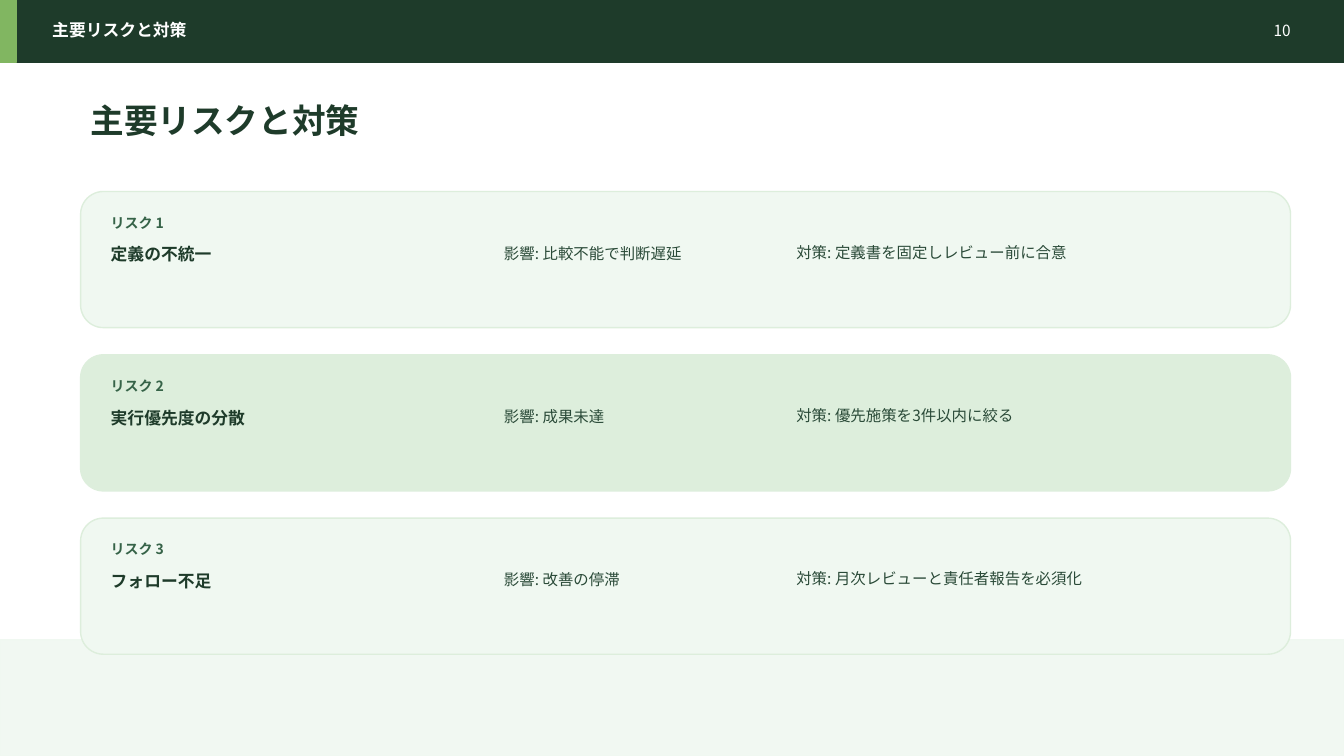
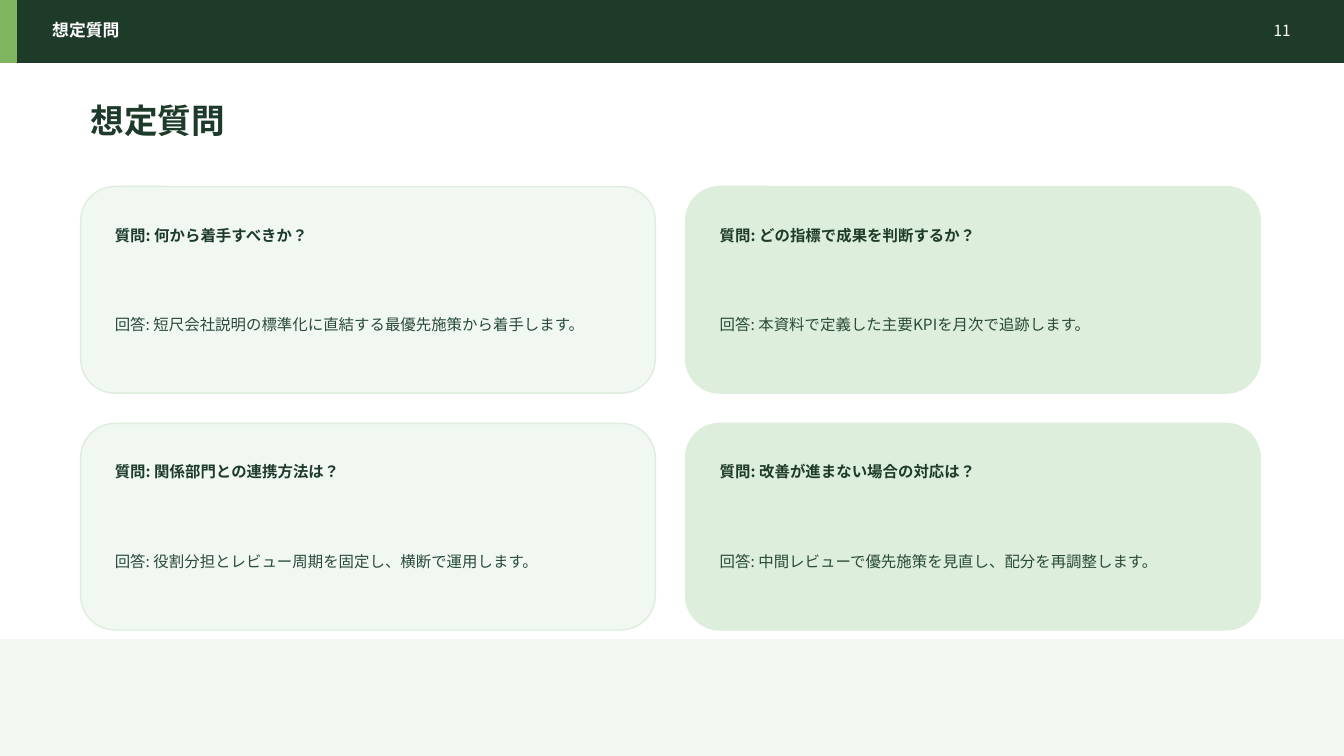
from lxml import etree
from pptx import Presentation
from pptx import util as u
from pptx.dml.color import RGBColor
from pptx.enum import lang, shapes, text
from pptx.oxml import ns

PX = 9144  # EMU per px, 100 px to the inch
WIDTH, HEIGHT = 1333, 750
SANS, SERIF = "Noto Sans CJK JP", "Cambria"
COLORS = {
    "dark": "1E3B2A",
    "accent": "81B661",
    "pale": "F0F8F1",
    "mint": "DDEEDC",
    "label": "366348",
    "body": "2A4A38",
    "white": "FFFFFF",
}
RECT = shapes.MSO_SHAPE.RECTANGLE
ROUND = shapes.MSO_SHAPE.ROUNDED_RECTANGLE
TOP, MIDDLE = text.MSO_ANCHOR.TOP, text.MSO_ANCHOR.MIDDLE
LEFT, RIGHT = text.PP_ALIGN.LEFT, text.PP_ALIGN.RIGHT


def add_box(s, kind, x, y, w, h, fill, line):
    sp = s.shapes.add_shape(kind, x * PX, y * PX, w * PX, h * PX)
    sp.shadow.inherit = False
    sp.fill.solid()
    sp.fill.fore_color.rgb = RGBColor.from_string(COLORS[fill])
    sp.line.color.rgb = RGBColor.from_string(COLORS[line])
    sp.line.width = u.Pt(1)
    return sp


def add_label(s, x, y, w, h, words, size, color, bold=False,
              font=SANS, anchor=MIDDLE, align=LEFT):
    tf = s.shapes.add_textbox(x * PX, y * PX, w * PX, h * PX).text_frame
    tf.word_wrap = True
    tf.vertical_anchor = anchor
    p = tf.paragraphs[0]
    p.alignment = align
    r = p.add_run()
    r.text = words
    r.font.size = u.Pt(size)
    r.font.bold = bold
    r.font.name = font
    r.font.language_id = lang.MSO_LANGUAGE_ID.JAPANESE
    r.font.color.rgb = RGBColor.from_string(COLORS[color])
    etree.SubElement(r.font._element, ns.qn("a:ea"), typeface=SANS)


prs = Presentation()
prs.slide_width, prs.slide_height = WIDTH * PX, HEIGHT * PX

# Bands, header and title shared by both slides
slides = []
for number, title in enumerate(["主要リスクと対策", "想定質問"], start=10):
    s = prs.slides.add_slide(prs.slide_layouts[6])
    slides.append(s)
    footer = add_box(s, RECT, 0, 635, WIDTH, 115, "pale", "pale")
    footer_color = footer.fill._xPr.find(".//" + ns.qn("a:srgbClr"))
    etree.SubElement(footer_color, ns.qn("a:alpha"), val="90000")
    add_box(s, RECT, 0, 0, WIDTH, 62, "dark", "dark")
    add_box(s, RECT, 0, 0, 16, 62, "accent", "accent")
    add_label(s, 42, 17, 880, 26, title, 12, "white", bold=True)
    add_label(s, 1215, 17, 75, 26, str(number), 11, "white", align=RIGHT)
    add_label(s, 80, 95, 1140, 48, title, 24, "dark", bold=True, font=SERIF)
risk_slide, question_slide = slides

# Risk rows
risks = [
    ("定義の不統一", "比較不能で判断遅延", "定義書を固定しレビュー前に合意"),
    ("実行優先度の分散", "成果未達", "優先施策を3件以内に絞る"),
    ("フォロー不足", "改善の停滞", "月次レビューと責任者報告を必須化"),
]
for i, (risk, impact, measure) in enumerate(risks):
    s, y = risk_slide, 190 + i * 162
    add_box(s, ROUND, 80, y, 1200, 135, ("pale", "mint")[i % 2], "mint")
    add_label(s, 100, y + 20, 120, 22, f"リスク {i + 1}", 10, "label", bold=True)
    add_label(s, 100, y + 46, 370, 32, risk, 12, "dark", bold=True)
    add_label(s, 490, y + 46, 280, 30, f"影響: {impact}", 11, "body")
    add_label(s, 780, y + 46, 480, 58, f"対策: {measure}", 11, "body", anchor=TOP)

# Question cards, two by two
questions = [
    ("何から着手すべきか？", "短尺会社説明の標準化に直結する最優先施策から着手します。"),
    ("どの指標で成果を判断するか？", "本資料で定義した主要KPIを月次で追跡します。"),
    ("関係部門との連携方法は？", "役割分担とレビュー周期を固定し、横断で運用します。"),
    ("改善が進まない場合の対応は？", "中間レビューで優先施策を見直し、配分を再調整します。"),
]
for i, (question, answer) in enumerate(questions):
    row, col = divmod(i, 2)
    s, x, y = question_slide, 80 + col * 600, 185 + row * 235
    add_box(s, ROUND, x, y, 570, 205, ("pale", "mint")[col], "mint")
    add_label(s, x + 24, y + 24, 520, 48, f"質問: {question}", 11, "dark", bold=True)
    add_label(s, x + 24, y + 82, 520, 110, f"回答: {answer}", 11, "body")

prs.save("out.pptx")
